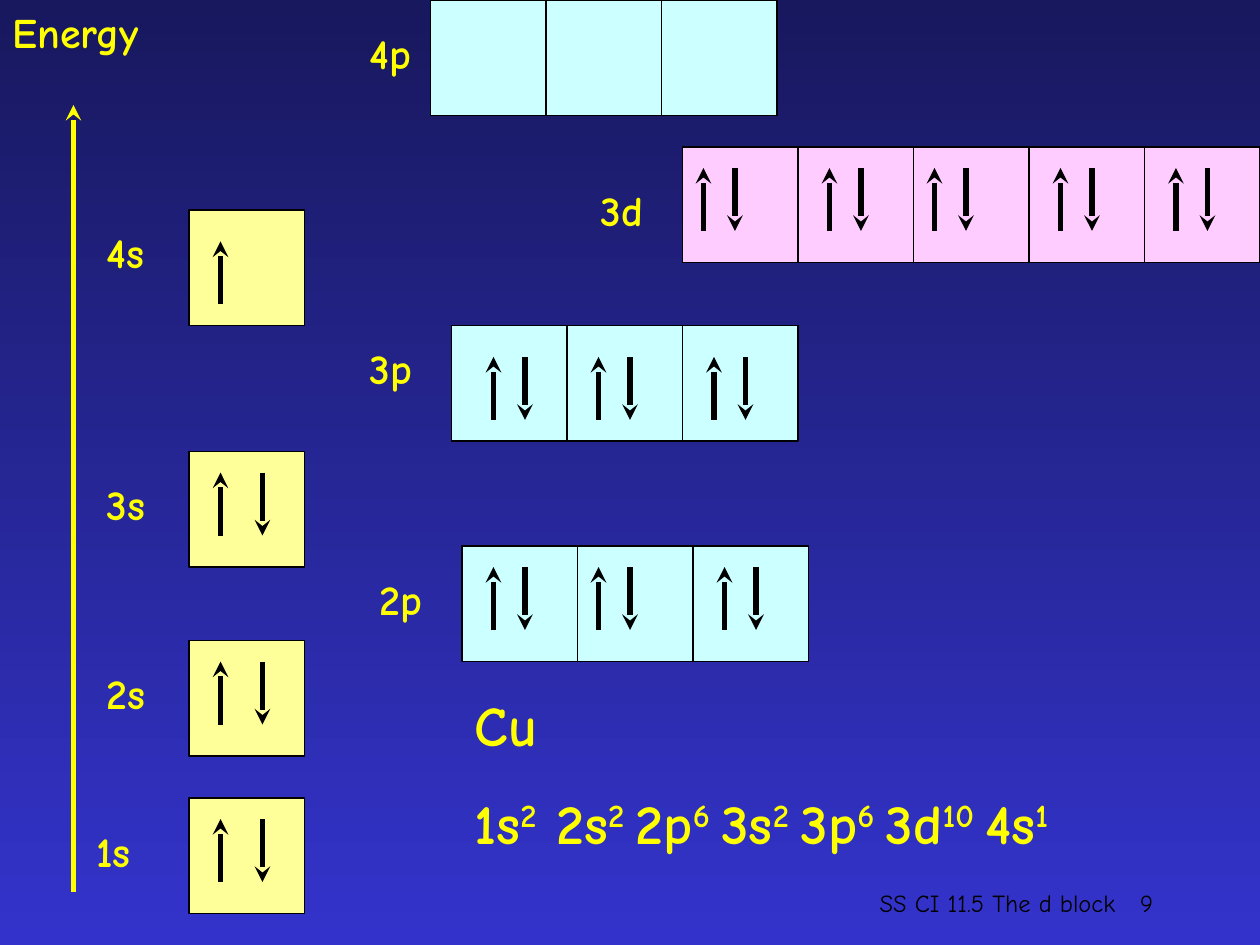
"""Build the electron configuration diagram for copper."""
from dataclasses import dataclass

from lxml import etree
from pptx import Presentation, util as u
from pptx.dml.color import RGBColor
from pptx.enum import shapes, text
from pptx.oxml.ns import qn

PX = 9525
FONT = "Comic Neue"
YELLOW, BLACK = "FFFF00", "000000"
S_FILL, P_FILL, D_FILL = "FFFF99", "CCFFFF", "FFCCFF"
BOX, ARROW = 88, 48


@dataclass
class Orbital:
    label: str
    label_left: int
    label_top: int
    left: int
    top: int
    fill: str
    boxes: int = 1
    arrow_top: int = 0
    up_arrows: tuple[int, ...] = ()
    pair_gap: int = 0


ORBITALS = [
    Orbital("1s", 64, 624, 144, 608, S_FILL, 1, 624, (168,), 32),
    Orbital("2s", 72, 504, 144, 488, S_FILL, 1, 504, (168,), 32),
    Orbital("2p", 280, 432, 352, 416, P_FILL, 3, 432, (376, 456, 552), 24),
    Orbital("3s", 72, 360, 144, 344, S_FILL, 1, 360, (168,), 32),
    Orbital("3p", 272, 256, 344, 248, P_FILL, 3, 272, (376, 456, 544), 24),
    Orbital("4s", 72, 168, 144, 160, S_FILL, 1, 184, (168,)),
    Orbital("3d", 448, 136, 520, 112, D_FILL, 5, 128, (536, 632, 712, 808, 896), 24),
    Orbital("4p", 272, 16, 328, 0, P_FILL, 3),
]
CONFIGURATION = ["1s", "2", " 2s", "2 ", "2p", "6 ", "3s", "2 ", "3p", "6 ", "3d", "10 ", "4s", "1"]


def colour(value: str) -> RGBColor:
    """Turn a hex string into a colour."""
    return RGBColor.from_string(value)


def style(font, size: int, value: str, bold: bool) -> None:
    """Set the size, colour and weight of a font."""
    font.name, font.size, font.bold = FONT, u.Pt(size), bold
    font.color.rgb = colour(value)


def add_text(slide, words: str, left: int, top: int, width: int, height: int = 48,
             size: int = 24, value: str = YELLOW, bold: bool = True,
             align=text.PP_ALIGN.LEFT, anchor=text.MSO_ANCHOR.TOP):
    """Add a one-paragraph text box and return its text frame."""
    frame = slide.shapes.add_textbox(left * PX, top * PX, width * PX, height * PX).text_frame
    frame.word_wrap = True
    frame.vertical_anchor = anchor
    frame.text = words
    paragraph = frame.paragraphs[0]
    paragraph.alignment = align
    style(paragraph.runs[0].font, size, value, bold)
    return frame


def add_arrow(slide, x: int, start: int, end: int, value: str = BLACK) -> None:
    """Add a vertical arrow pointing from start to end."""
    arrow = slide.shapes.add_connector(
        shapes.MSO_CONNECTOR.STRAIGHT, x * PX, start * PX, x * PX, end * PX)
    arrow.line.color.rgb = colour(value)
    arrow.line.width = u.Pt(3)
    etree.SubElement(arrow.line._get_or_add_ln(), qn("a:tailEnd"), type="stealth")
    etree.SubElement(arrow._element.spPr, qn("a:effectLst"))


def add_orbital(slide, orbital: Orbital) -> None:
    """Add the label, boxes and electron arrows of an orbital."""
    add_text(slide, orbital.label, orbital.label_left, orbital.label_top, 72)
    for index in range(orbital.boxes):
        shape = slide.shapes.add_shape(
            shapes.MSO_SHAPE.RECTANGLE, (orbital.left + index * BOX) * PX,
            orbital.top * PX, BOX * PX, BOX * PX)
        shape.shadow.inherit = False
        shape.fill.solid()
        shape.fill.fore_color.rgb = colour(orbital.fill)
        shape.line.color.rgb = colour(BLACK)
        shape.line.width = u.Pt(0.75)
    bottom = orbital.arrow_top + ARROW
    for x in orbital.up_arrows:
        add_arrow(slide, x, bottom, orbital.arrow_top)
        if orbital.pair_gap:
            add_arrow(slide, x + orbital.pair_gap, orbital.arrow_top, bottom)


def add_configuration(slide) -> None:
    """Add the element symbol and its electron configuration."""
    frame = add_text(slide, "Cu", 352, 521, 608, 137, size=32)
    paragraph = frame.add_paragraph()
    paragraph.space_before = u.Pt(18)
    for index, words in enumerate(CONFIGURATION):
        run = paragraph.add_run()
        run.text = words
        style(run.font, 32, YELLOW, True)
        if index % 2:
            run._r.get_or_add_rPr().set("baseline", "30000")


def set_background(slide) -> None:
    """Fill the background with a blue gradient from top to bottom."""
    fill = slide.background.fill
    fill.gradient()
    fill.gradient_angle = 270
    for stop, value, position in zip(fill.gradient_stops, ("18185E", "3333CC"), (0, 1)):
        stop.color.rgb = colour(value)
        stop.position = position


def main() -> None:
    """Build and save the slide."""
    presentation = Presentation()
    presentation.slide_width, presentation.slide_height = 960 * PX, 720 * PX
    slide = presentation.slides.add_slide(presentation.slide_layouts[6])
    set_background(slide)
    footer = dict(size=14, value=BLACK, bold=False, anchor=text.MSO_ANCHOR.BOTTOM)
    add_text(slide, "SS CI 11.5 The d block", 608, 656, 304, align=text.PP_ALIGN.CENTER, **footer)
    add_text(slide, "9", 688, 656, 200, align=text.PP_ALIGN.RIGHT, **footer)
    add_text(slide, "Energy", 0, 0, 264)
    add_arrow(slide, 56, 680, 80, YELLOW)
    for orbital in ORBITALS:
        add_orbital(slide, orbital)
    add_configuration(slide)
    presentation.save("out.pptx")


if __name__ == "__main__":
    main()
